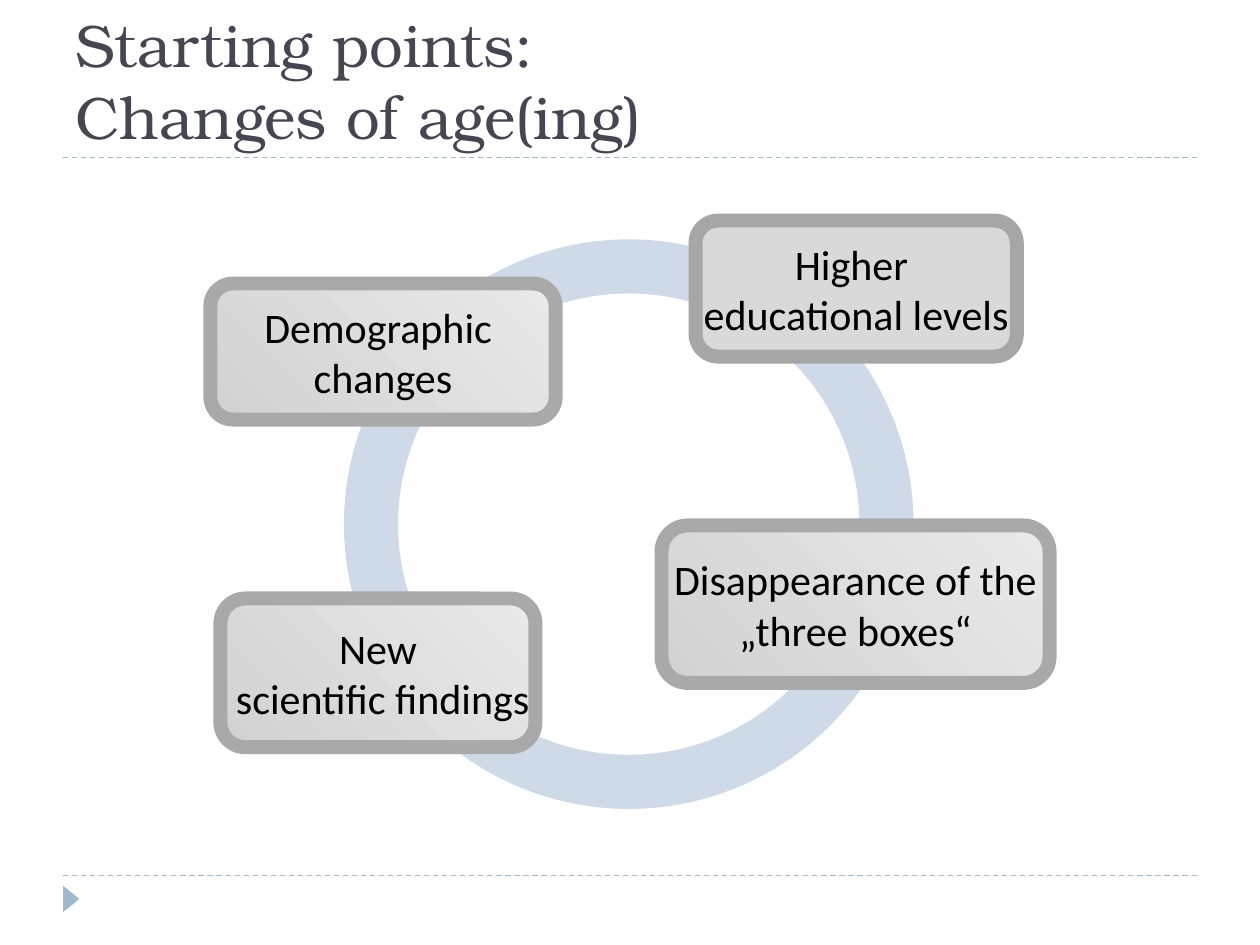
from lxml.etree import SubElement
from pptx import Presentation
from pptx.dml.color import RGBColor
from pptx.enum.dml import MSO_LINE
from pptx.enum.shapes import MSO_CONNECTOR, MSO_SHAPE
from pptx.enum.text import MSO_ANCHOR, PP_ALIGN
from pptx.oxml.ns import qn
from pptx.util import Inches, Pt

ACCENT = RGBColor(0x9F, 0xB8, 0xCD)
RING = RGBColor(0xCF, 0xDA, 0xE8)
TITLE = RGBColor(0x46, 0x46, 0x53)
BLACK = RGBColor(0x00, 0x00, 0x00)
FLAT_FILL = RGBColor(0xD9, 0xD9, 0xD9)
FLAT_BORDER = RGBColor(0xA6, 0xA6, 0xA6)
BORDER = RGBColor(0xA9, 0xA9, 0xA9)
SHADE = (RGBColor(0xD2, 0xD2, 0xD2), RGBColor(0xE9, 0xE9, 0xE9))


class SlideBuilder:
    TITLE_FONT = "TeX Gyre Bonum"
    BODY_FONT = "Calibri"
    COLUMNS, ROWS = 40, 30

    def __init__(self, prs):
        self.s = prs.slides.add_slide(prs.slide_layouts[6])
        self.col = prs.slide_width / self.COLUMNS
        self.row = prs.slide_height / self.ROWS

    def place(self, x, y, w, h):
        return (round(x * self.col), round(y * self.row),
                round(w * self.col), round(h * self.row))

    def set_text(self, tf, text, font, size, color, align, anchor):
        tf.text = text
        tf.vertical_anchor = anchor
        for p in tf.paragraphs:
            p.alignment = align
            for r in p.runs:
                r.font.name = font
                r.font.size = Pt(size)
                r.font.color.rgb = color

    def title(self, text, *area):
        tf = self.s.shapes.add_textbox(*self.place(*area)).text_frame
        tf.word_wrap = True
        self.set_text(tf, text, self.TITLE_FONT, 34.2, TITLE,
                      PP_ALIGN.LEFT, MSO_ANCHOR.BOTTOM)

    def rule(self, y):
        x1, top, x2, bottom = self.place(2, y, self.COLUMNS - 2, y)
        line = self.s.shapes.add_connector(
            MSO_CONNECTOR.STRAIGHT, x1, top, x2, bottom)
        line.line.color.rgb = ACCENT
        line.line.width = Pt(0.75)
        line.line.dash_style = MSO_LINE.DASH
        SubElement(line._element.spPr, qn("a:effectLst"))

    def shape(self, kind, area, color=None):
        sp = self.s.shapes.add_shape(kind, *self.place(*area))
        sp.shadow.inherit = False
        sp.line.fill.background()
        if color is not None:
            sp.fill.solid()
            sp.fill.fore_color.rgb = color
        return sp

    def marker(self, *area):
        self.shape(MSO_SHAPE.ISOSCELES_TRIANGLE, area, ACCENT).rotation = 90

    def ring(self, *area):
        self.shape(MSO_SHAPE.DONUT, area, RING).adjustments[0] = 0.095

    def box(self, text, area, color=None, border=BORDER):
        sp = self.shape(MSO_SHAPE.ROUNDED_RECTANGLE, area, color)
        if color is None:
            sp.fill.gradient()
            sp.fill.gradient_angle = 45
            for stop, shade, position in zip(sp.fill.gradient_stops, SHADE, (0, 1)):
                stop.color.rgb = shade
                stop.position = position
        sp.line.color.rgb = border
        sp.line.width = Pt(8)
        tf = sp.text_frame
        tf.word_wrap = False
        self.set_text(tf, text, self.BODY_FONT, 24, BLACK,
                      PP_ALIGN.CENTER, MSO_ANCHOR.MIDDLE)


def main():
    prs = Presentation()
    prs.slide_width, prs.slide_height = Inches(10), Inches(7.5)
    b = SlideBuilder(prs)
    for y in (27.8, 5):
        b.rule(y)
    b.marker(1.84, 28.28, 0.84, 0.52)
    b.title("Starting points: \vChanges of age(ing)", 2, 1, 36, 4)
    b.ring(10.92, 7.6, 18.08, 18.08)
    b.box("Higher \neducational levels", (22.08, 7, 10.2, 4.32),
          FLAT_FILL, FLAT_BORDER)
    b.box("Disappearance of the\n„three boxes“", (21, 16.68, 12.32, 5))
    b.box("Demographic \nchanges", (6.68, 9, 10.96, 4.32))
    b.box("New\n scientific findings", (7, 19, 10, 4.72))
    prs.save("out.pptx")


if __name__ == "__main__":
    main()
